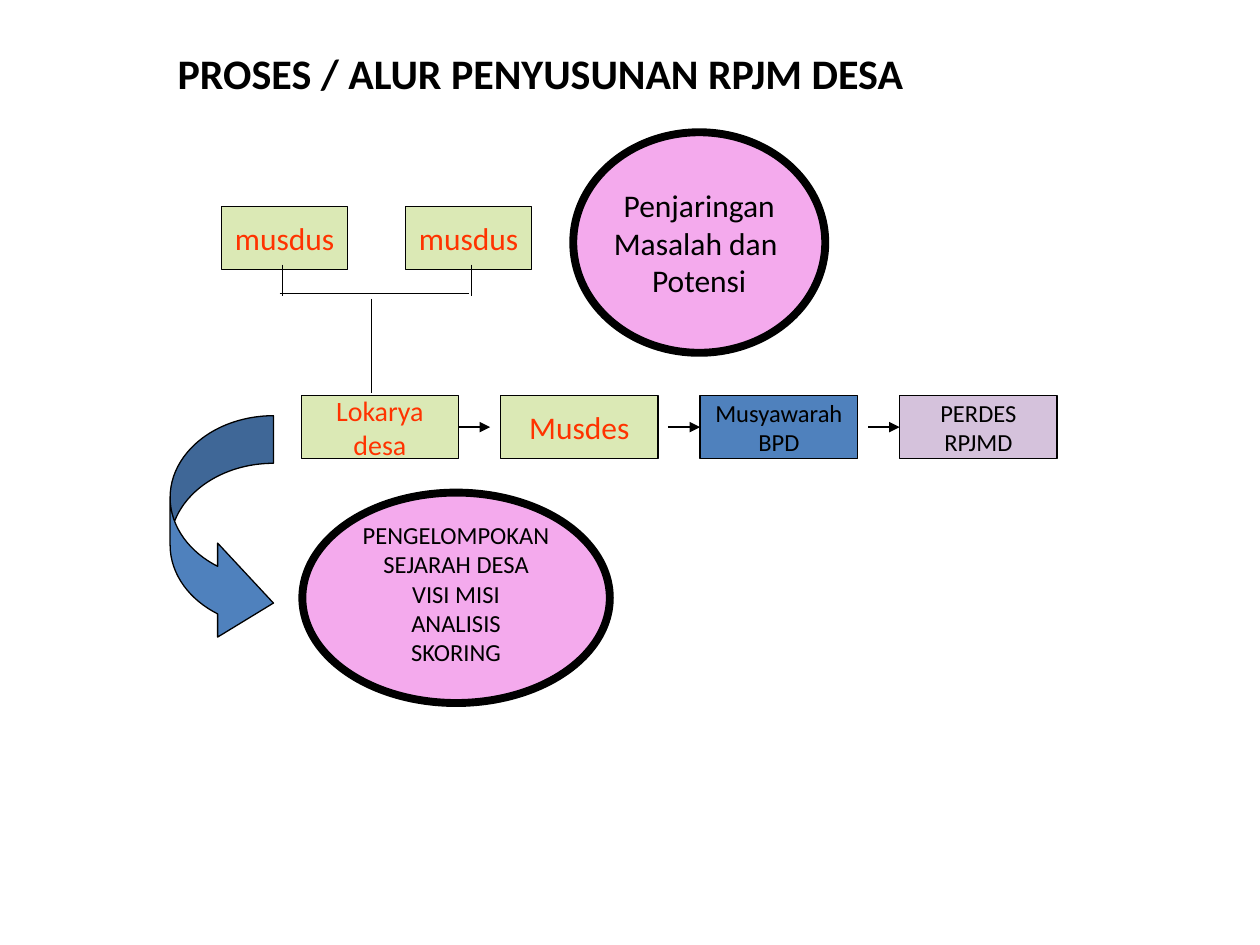
import pptx
import pptx.util
import pptx.dml.color
import pptx.enum.shapes
import pptx.enum.text
import pptx.oxml
import pptx.oxml.ns

Inches, Pt = pptx.util.Inches, pptx.util.Pt
Kind = pptx.enum.shapes.MSO_SHAPE
Align = pptx.enum.text.PP_ALIGN
Anchor = pptx.enum.text.MSO_ANCHOR
hue = pptx.dml.color.RGBColor.from_string
GREEN, BLUE, PINK, MAUVE = "DBE9B5", "4F81BD", "F4AAED", "D5C2DC"
RED, BLACK = "FF3300", "000000"

deck = pptx.Presentation()
deck.slide_width, deck.slide_height = Inches(10), Inches(7.5)
slide = deck.slides.add_slide(deck.slide_layouts[5])


def add_node(kind, box, fill, lines=(), size=18, color=BLACK, edge=0.75):
    node = slide.shapes.add_shape(kind, *[Inches(v) for v in box])
    node.shadow.inherit = False
    node.fill.solid()
    node.fill.fore_color.rgb = hue(fill)
    node.line.color.rgb = hue(BLACK)
    node.line.width = Pt(edge)
    frame = node.text_frame
    frame.word_wrap = False
    frame.vertical_anchor = Anchor.MIDDLE
    for i, line in enumerate(lines):
        para = frame.add_paragraph() if i else frame.paragraphs[0]
        para.alignment = Align.CENTER
        run = para.add_run()
        run.text = line
        run.font.name, run.font.size = "Calibri", Pt(size)
        run.font.color.rgb = hue(color)
    return node


def add_line(x1, y1, x2, y2, arrow=False):
    line = slide.shapes.add_connector(
        pptx.enum.shapes.MSO_CONNECTOR.STRAIGHT,
        Inches(x1), Inches(y1), Inches(x2), Inches(y2))
    line.line.color.rgb = hue(BLACK)
    line.line.width = Pt(0.75)
    if arrow:
        head = pptx.oxml.parse_xml(
            '<a:tailEnd %s type="triangle"/>' % pptx.oxml.ns.nsdecls("a"))
        line.line._get_or_add_ln().append(head)
    line._element.spPr.append(pptx.oxml.parse_xml(
        "<a:effectLst %s/>" % pptx.oxml.ns.nsdecls("a")))
    return line


# Title
title = slide.shapes.title
title.left, title.top = Inches(0.25), Inches(0.33)
title.width, title.height = Inches(8.08), Inches(0.5)
title.text_frame.vertical_anchor = Anchor.MIDDLE
para = title.text_frame.paragraphs[0]
para.alignment = Align.CENTER
run = para.add_run()
run.text = "PROSES / ALUR PENYUSUNAN RPJM DESA"
run.font.name, run.font.size, run.font.bold = "Calibri", Pt(24), True
run.font.color.rgb = hue(BLACK)

# Hamlet meetings and the bracket below them
for left in (1.76, 3.22):
    add_node(Kind.RECTANGLE, (left, 1.64, 1, 0.5), GREEN, ["musdus"], 18, RED)
for x in (2.24, 3.74):
    add_line(x, 2.1, x, 2.35)
add_line(2.22, 2.33, 3.72, 2.33)
add_line(2.95, 2.37, 2.95, 3.12)

# Upper ellipse
add_node(Kind.OVAL, (4.55, 1.05, 2, 1.75), PINK,
         ["Penjaringan", "Masalah dan ", "Potensi"], edge=4.5)

# Row of steps
steps = [
    (["Lokarya", "desa"], GREEN, 16, RED),
    (["Musdes"], GREEN, 18, RED),
    (["Musyawarah", "BPD"], BLUE, 14, BLACK),
    (["PERDES", "RPJMD"], MAUVE, 14, BLACK),
]
row = [add_node(Kind.RECTANGLE, (2.39 + 19 / 12 * i, 3.14, 1.25, 0.5),
                fill, lines, size, color)
       for i, (lines, fill, size, color) in enumerate(steps)]

# Arrows between steps
links = [add_line(x, 3.39, x + 0.25, 3.39, True) for x in (3.64, 5.3, 6.89)]
links[0].begin_connect(row[0], 3)
links[1].end_connect(row[2], 1)
links[2].end_connect(row[3], 1)

# Lower ellipse, its text slightly above the middle
group = add_node(Kind.OVAL, (2.4, 3.91, 2.44, 1.67), PINK,
                 ["PENGELOMPOKAN", "SEJARAH DESA", "VISI MISI",
                  "ANALISIS", "SKORING"], 14, edge=4.5)
group.text_frame.margin_bottom = Inches(0.12)

# Curved arrow
curve = add_node(Kind.CURVED_RIGHT_ARROW, (1.35, 3.3, 0.82, 1.86), BLUE)
for i, value in enumerate((0.46, 0.91, 0.54)):
    curve.adjustments[i] = value

deck.save("out.pptx")
